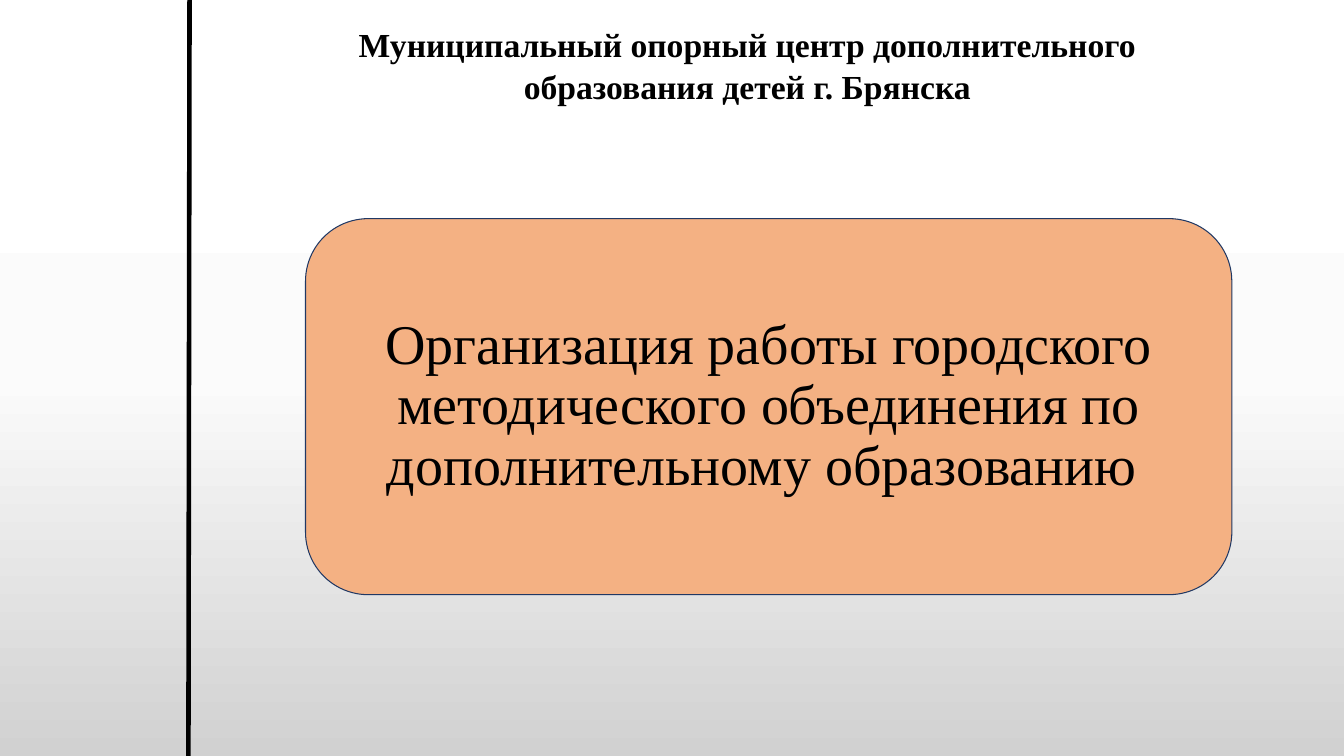
import dataclasses

import lxml.etree
import pptx
import pptx.dml.color
import pptx.enum.shapes
import pptx.enum.text
import pptx.oxml
import pptx.oxml.ns
import pptx.util

Pt = pptx.util.Pt
ANCHOR = pptx.enum.text.MSO_ANCHOR


@dataclasses.dataclass(frozen=True)
class Theme:
    font: str = "Times New Roman"
    ink: str = "000000"
    panel_fill: str = "F4B183"
    panel_line: str = "203864"
    background: tuple = ((5, "FFFFFF"), (17, "FFFFFF"), (50, "FBFBFB"), (100, "D1D1D1"))
    header_size: int = 24
    title_size: int = 40


def rgb(value):
    return pptx.dml.color.RGBColor.from_string(value)


class SlideBuilder:
    def __init__(self, slide, theme):
        self.slide = slide
        self.theme = theme

    def gradient_background(self):
        fill = self.slide.background.fill
        fill.gradient()
        fill.gradient_angle = 270
        stops = fill.gradient_stops[0]._gs.getparent()
        for stop in list(stops):
            stops.remove(stop)
        for percent, color in self.theme.background:
            stop = lxml.etree.SubElement(
                stops, pptx.oxml.ns.qn("a:gs"), pos=str(percent * 1000))
            lxml.etree.SubElement(stop, pptx.oxml.ns.qn("a:srgbClr"), val=color)

    def panel(self, left, top, width, height):
        shape = self.slide.shapes.add_shape(
            pptx.enum.shapes.MSO_SHAPE.ROUNDED_RECTANGLE,
            Pt(left), Pt(top), Pt(width), Pt(height))
        shape.shadow.inherit = False
        shape.fill.solid()
        shape.fill.fore_color.rgb = rgb(self.theme.panel_fill)
        shape.line.color.rgb = rgb(self.theme.panel_line)
        shape.line.width = Pt(0.75)

    def rule(self, start_x, start_y, end_x, end_y, width):
        line = self.slide.shapes.add_connector(
            pptx.enum.shapes.MSO_CONNECTOR.STRAIGHT,
            Pt(start_x), Pt(start_y), Pt(end_x), Pt(end_y))
        line.line.color.rgb = rgb(self.theme.ink)
        line.line.width = Pt(width)
        lxml.etree.SubElement(line._element.spPr, pptx.oxml.ns.qn("a:effectLst"))

    def placeholder(self, shape, box, texts, size, bold, anchor, spacing, margins):
        """Move a placeholder to the front and fill it with centred paragraphs."""
        self.slide.shapes._spTree.append(shape._element)
        shape.left, shape.top, shape.width, shape.height = map(Pt, box)
        frame = shape.text_frame
        frame.word_wrap = True
        frame.auto_size = pptx.enum.text.MSO_AUTO_SIZE.NONE
        frame.vertical_anchor = anchor
        frame.margin_left = frame.margin_right = Pt(margins[0])
        frame.margin_top = frame.margin_bottom = Pt(margins[1])
        for index, text in enumerate(texts):
            paragraph = frame.add_paragraph() if index else frame.paragraphs[0]
            paragraph.alignment = pptx.enum.text.PP_ALIGN.CENTER
            paragraph.line_spacing = spacing
            paragraph.space_before = paragraph.space_after = Pt(0)
            run = paragraph.add_run()
            run.text = text
            run.font.name = self.theme.font
            run.font.size = Pt(size)
            run.font.bold = bold
            run.font.color.rgb = rgb(self.theme.ink)


def main():
    presentation = pptx.Presentation()
    presentation.slide_width = Pt(960)
    presentation.slide_height = Pt(540)
    slide = presentation.slides.add_slide(presentation.slide_layouts[0])
    theme = Theme()
    builder = SlideBuilder(slide, theme)

    builder.gradient_background()
    builder.placeholder(
        slide.placeholders[1], (241.9, 11.5, 589.7, 65.5),
        ["Муниципальный опорный центр дополнительного ",
         "образования детей г. Брянска "],
        theme.header_size, True, ANCHOR.TOP, 1.06, (7.2, 3.6))
    builder.panel(218.2, 156.2, 661.7, 268.6)
    builder.placeholder(
        slide.shapes.title, (231.1, 169.2, 635.8, 242.6),
        ["Организация работы городского методического объединения "
         "по дополнительному образованию "],
        theme.title_size, False, ANCHOR.MIDDLE, 0.9, (12, 12))
    builder.rule(135.4, 0, 134.6, 540, 3.25)

    presentation.save("out.pptx")


if __name__ == "__main__":
    main()
